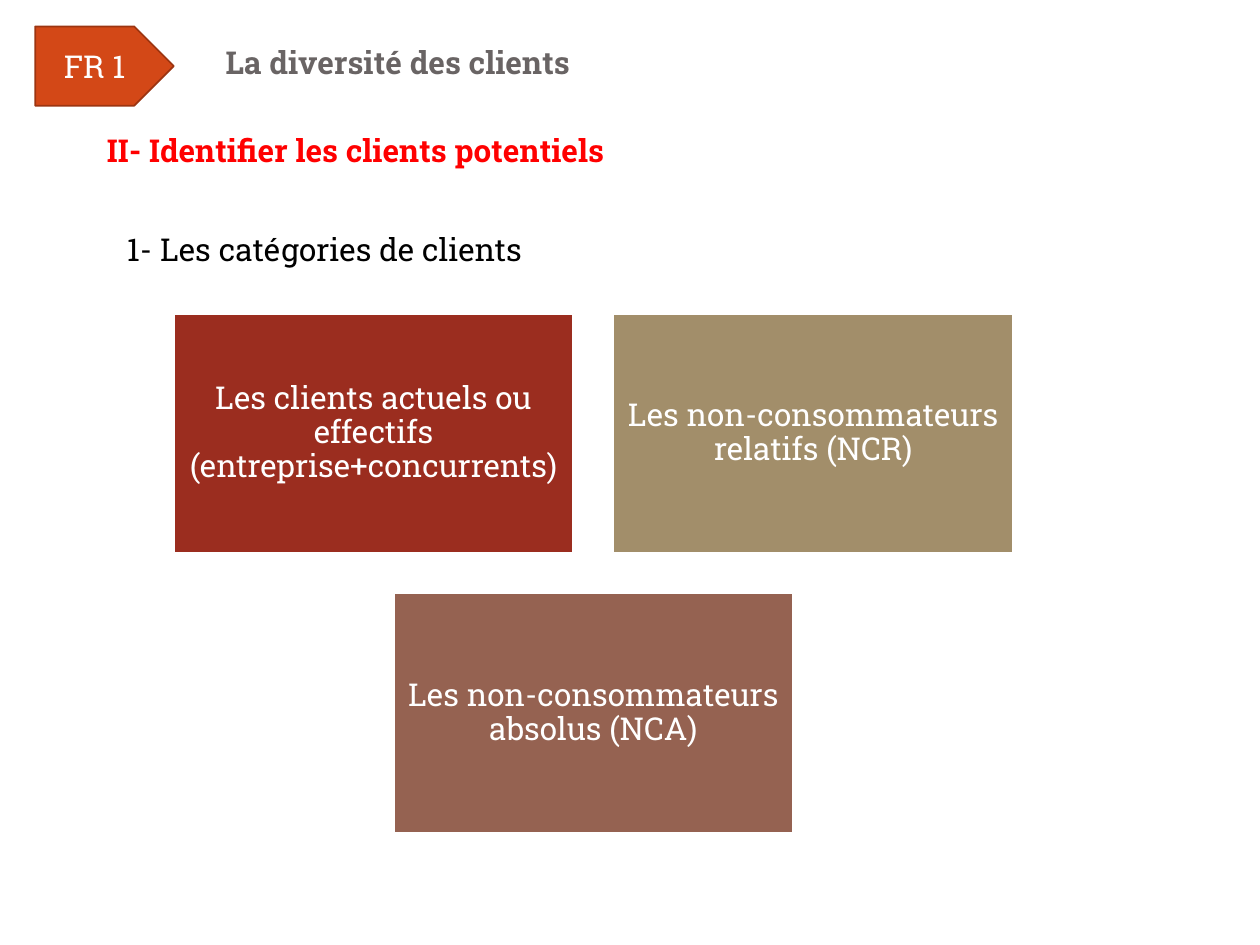
import pptx
import pptx.util
import pptx.dml.color
import pptx.enum.shapes
import pptx.enum.text

Inches = pptx.util.Inches
RGBColor = pptx.dml.color.RGBColor
MSO_SHAPE = pptx.enum.shapes.MSO_SHAPE
PP_ALIGN = pptx.enum.text.PP_ALIGN
MSO_ANCHOR = pptx.enum.text.MSO_ANCHOR

FONT = "Roboto Slab"
WHITE = RGBColor(0xFF, 0xFF, 0xFF)
BLACK = RGBColor(0x00, 0x00, 0x00)
RED = RGBColor(0xFF, 0x00, 0x00)
GREY = RGBColor(0x69, 0x64, 0x64)
ORANGE = RGBColor(0xD3, 0x48, 0x17)
DARK_ORANGE = RGBColor(0x9C, 0x35, 0x11)
BRICK = RGBColor(0x9B, 0x2D, 0x1F)
SAND = RGBColor(0xA2, 0x8E, 0x6A)
BROWN = RGBColor(0x95, 0x62, 0x51)


def write(holder, text, color, bold=False, align=PP_ALIGN.LEFT, anchor=MSO_ANCHOR.TOP):
    frame = holder.text_frame
    frame.text = text
    frame.word_wrap = True
    frame.vertical_anchor = anchor
    paragraph = frame.paragraphs[0]
    paragraph.alignment = align
    font = paragraph.runs[0].font
    font.name = FONT
    font.size = pptx.util.Pt(18)
    font.bold = bold
    font.color.rgb = color


def add_block(kind, left, top, width, height, text, fill, line):
    block = slide.shapes.add_shape(
        kind, Inches(left), Inches(top), Inches(width), Inches(height))
    block.shadow.inherit = False
    block.fill.solid()
    block.fill.fore_color.rgb = fill
    block.line.color.rgb = line
    block.line.width = pptx.util.Pt(1)
    write(block, text, WHITE, align=PP_ALIGN.CENTER, anchor=MSO_ANCHOR.MIDDLE)
    return block


presentation = pptx.Presentation()
presentation.slide_width = Inches(10)
presentation.slide_height = Inches(7.5)
slide = presentation.slides.add_slide(presentation.slide_layouts[5])

title = slide.shapes.title
title.left, title.top = Inches(1.69), Inches(0.29)
title.width, title.height = Inches(7.95), Inches(0.4)
write(title, "La diversité des clients", GREY, bold=True)
title.text_frame.auto_size = pptx.enum.text.MSO_AUTO_SIZE.NONE

add_block(MSO_SHAPE.PENTAGON, 0.28, 0.21, 1.1, 0.63, "FR 1", ORANGE, DARK_ORANGE)

headings = [
    ("II- Identifier les clients potentiels", 0.75, 0.99, 7.48, RED, True),
    ("1- Les catégories de clients", 0.91, 1.78, 5.43, BLACK, False),
]
for text, left, top, width, color, bold in headings:
    heading = slide.shapes.add_textbox(
        Inches(left), Inches(top), Inches(width), Inches(0.4))
    write(heading, text, color, bold)

card_width, card_height, gap = 3.17, 1.9, 0.32
first_left, first_top = 1.38, 2.49
column_step = card_width + gap
row_step = card_height + gap
categories = [
    ("Les clients actuels ou effectifs (entreprise+concurrents)", 0, 0, BRICK),
    ("Les non-consommateurs relatifs (NCR)", 1, 0, SAND),
    ("Les non-consommateurs absolus (NCA)", 0.5, 1, BROWN),
]
for text, column, row, fill in categories:
    card = add_block(
        MSO_SHAPE.RECTANGLE, first_left + column * column_step,
        first_top + row * row_step, card_width, card_height, text, fill, WHITE)
    frame = card.text_frame
    frame.margin_left = frame.margin_right = Inches(0.07)
    frame.margin_top = frame.margin_bottom = Inches(0.07)
    frame.paragraphs[0].line_spacing = 0.9

presentation.save("out.pptx")
